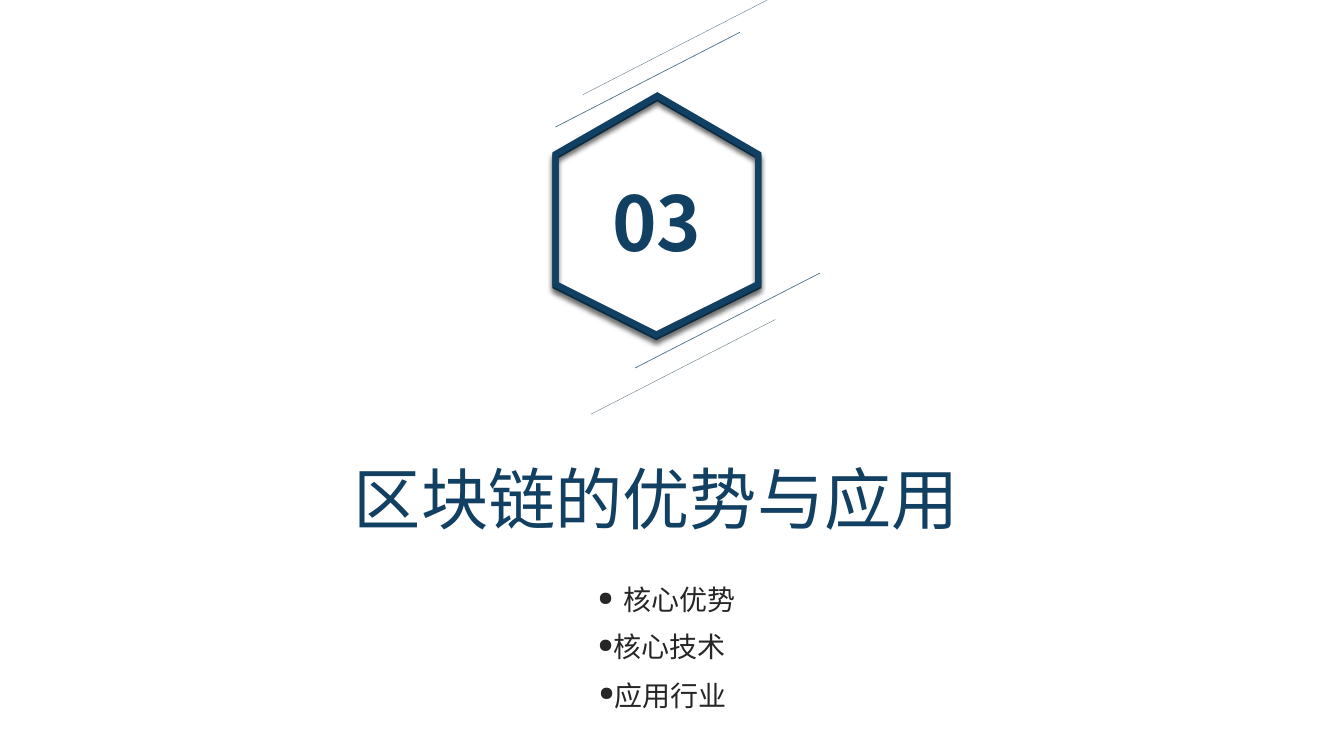
from typing import NamedTuple

import pptx
import pptx.dml.color
import pptx.enum.shapes
import pptx.enum.text
import pptx.oxml
import pptx.oxml.ns
import pptx.shapes.autoshape
import pptx.slide
import pptx.text.text
import pptx.util
from pptx.util import Inches

FONT = "Noto Sans CJK SC"
NAVY = "124062"
SLATE = "537285"
CHARCOAL = "262626"
NAMESPACE = pptx.oxml.ns.nsdecls("a")

HEXAGON_LEFT = 5.51
HEXAGON_TOPS = (0.97, 0.95)
HEXAGON_OUTLINE = ((1.01, 0), (2.01, 0.58), (2.01, 1.87), (1, 2.37), (0, 1.87), (0, 0.58))
STRIPE_WIDTH, STRIPE_RISE = 1.83, 0.94


class Stripe(NamedTuple):
    left: float
    bottom: float
    weight: float


class Topic(NamedTuple):
    text: str
    left: float
    top: float
    height: float
    margin: float


STRIPES = (
    Stripe(6.3, 3.65, 0.5),
    Stripe(5.86, 4.11, 0.25),
    Stripe(5.51, 1.26, 0.5),
    Stripe(5.78, 0.94, 0.25),
)
TOPICS = (
    Topic("核心优势", 5.93, 5.78, 0.34, 0.25),
    Topic("核心技术", 5.93, 6.25, 0.67, 0),
    Topic("应用行业", 5.94, 6.73, 0.34, 0),
)


def colour(code: str) -> pptx.dml.color.RGBColor:
    return pptx.dml.color.RGBColor.from_string(code)


def place(
    shape: pptx.shapes.autoshape.Shape, left: float, top: float, width: float, height: float
) -> None:
    shape.left, shape.top = Inches(left), Inches(top)
    shape.width, shape.height = Inches(width), Inches(height)


def write(
    shape: pptx.shapes.autoshape.Shape,
    text: str,
    size: float,
    code: str,
    bold: bool = False,
    wrap: bool = True,
    alignment: pptx.enum.text.PP_ALIGN = pptx.enum.text.PP_ALIGN.LEFT,
) -> pptx.text.text._Paragraph:
    """Fill a shape with one formatted paragraph and return it."""
    frame = shape.text_frame
    frame.text = text
    frame.word_wrap = wrap
    frame.auto_size = pptx.enum.text.MSO_AUTO_SIZE.SHAPE_TO_FIT_TEXT
    frame.vertical_anchor = pptx.enum.text.MSO_ANCHOR.TOP
    paragraph = frame.paragraphs[0]
    paragraph.alignment = alignment
    font = paragraph.runs[0].font
    font.name, font.size, font.bold = FONT, pptx.util.Pt(size), bold
    font.color.rgb = colour(code)
    east_asian = pptx.oxml.parse_xml(f'<a:ea {NAMESPACE} typeface="{FONT}"/>')
    paragraph.runs[0]._r.rPr.find(pptx.oxml.ns.qn("a:latin")).addnext(east_asian)
    return paragraph


def add_hexagon(slide: pptx.slide.Slide, top: float) -> None:
    points = [(Inches(HEXAGON_LEFT + x), Inches(top + y)) for x, y in HEXAGON_OUTLINE]
    builder = slide.shapes.build_freeform(*points[0])
    builder.add_line_segments(points[1:], close=True)
    hexagon = builder.convert_to_shape()
    hexagon.fill.background()
    hexagon.line.color.rgb = colour(NAVY)
    hexagon.line.width = pptx.util.Pt(4.5)
    hexagon.shadow.inherit = False
    properties = hexagon._element.spPr
    properties.find(pptx.oxml.ns.qn("a:ln")).append(
        pptx.oxml.parse_xml(f'<a:miter {NAMESPACE} lim="800000"/>')
    )
    properties.find(pptx.oxml.ns.qn("a:effectLst")).append(pptx.oxml.parse_xml(
        f'<a:outerShdw {NAMESPACE} blurRad="{pptx.util.Pt(4)}" '
        f'dist="{pptx.util.Pt(3)}" dir="5400000" rotWithShape="0">'
        '<a:srgbClr val="000000"><a:alpha val="40000"/></a:srgbClr></a:outerShdw>'
    ))


def add_stripe(slide: pptx.slide.Slide, stripe: Stripe) -> None:
    line = slide.shapes.add_connector(
        pptx.enum.shapes.MSO_CONNECTOR.STRAIGHT,
        Inches(stripe.left),
        Inches(stripe.bottom),
        Inches(stripe.left + STRIPE_WIDTH),
        Inches(stripe.bottom - STRIPE_RISE),
    )
    line.line.color.rgb = colour(SLATE)
    line.line.width = pptx.util.Pt(stripe.weight)
    line._element.spPr.append(pptx.oxml.parse_xml(f'<a:effectLst {NAMESPACE}/>'))


def add_topic(slide: pptx.slide.Slide, topic: Topic) -> None:
    box = slide.shapes.add_textbox(0, 0, 0, 0)
    place(box, topic.left, topic.top, 2.93, topic.height)
    frame = box.text_frame
    frame.margin_left = frame.margin_right = frame.margin_top = frame.margin_bottom = 0
    paragraph = write(box, topic.text, 20, CHARCOAL)
    properties = paragraph._p.get_or_add_pPr()
    properties.set("marL", str(Inches(topic.margin)))
    properties.set("indent", str(Inches(-0.25)))
    for bullet_part in ('buSzPct {} val="70000"', 'buChar {} char="●"'):
        properties.append(pptx.oxml.parse_xml(f"<a:{bullet_part.format(NAMESPACE)}/>"))


def main() -> None:
    presentation = pptx.Presentation()
    presentation.slide_width = Inches(13.33)
    presentation.slide_height = Inches(7.5)
    slide = presentation.slides.add_slide(presentation.slide_layouts.get_by_name("Title Only"))

    for top in HEXAGON_TOPS:
        add_hexagon(slide, top)
    title = slide.shapes.title
    place(title, 3.41, 4.49, 6.4, 0.91)
    write(title, "区块链的优势与应用", 48, NAVY, wrap=False)
    for stripe in STRIPES:
        add_stripe(slide, stripe)
    number = slide.shapes.add_textbox(0, 0, 0, 0)
    place(number, 5.93, 1.7, 1.17, 1.01)
    write(number, "03", 54, NAVY, bold=True, alignment=pptx.enum.text.PP_ALIGN.CENTER)
    for topic in TOPICS:
        add_topic(slide, topic)

    presentation.save("out.pptx")


if __name__ == "__main__":
    main()
